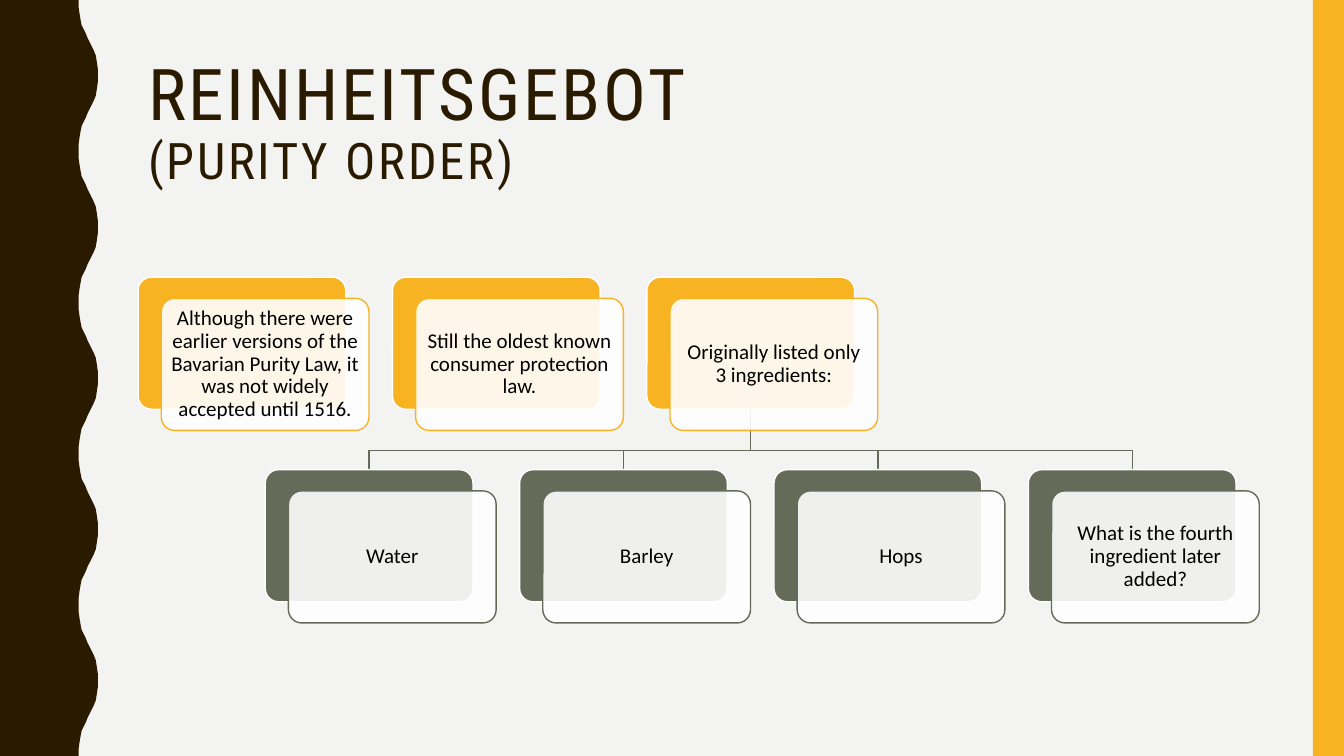
from dataclasses import dataclass

from lxml import etree
from pptx import Presentation
from pptx.dml.color import RGBColor
from pptx.enum.shapes import MSO_SHAPE
from pptx.enum.text import MSO_ANCHOR, PP_ALIGN
from pptx.oxml.ns import qn
from pptx.util import Inches, Pt

RECT, ROUNDED = MSO_SHAPE.RECTANGLE, MSO_SHAPE.ROUNDED_RECTANGLE
MIDDLE, CENTER = MSO_ANCHOR.MIDDLE, PP_ALIGN.CENTER

SLIDE_W, SLIDE_H = 13.33, 7.5

# Card grid: cards are two columns apart, the lower row shifted by one
LEFT, TOP = 1.37, 2.75
COL_W = (10.2 - LEFT) / 7
ROW_H = 1.91
CARD_W, CARD_H = 2.06, 1.31
SHIFT_X, SHIFT_Y = 0.23, 0.21
BRANCH_DROP = 0.41

# Wavy edge: half a wave as (x, y), mirrored for the other half
WAVE_H = 1.5
HALF_WAVE = [(0.78, 0), (0.78, 0.07), (0.79, 0.14), (0.8, 0.2), (0.81, 0.25),
             (0.83, 0.29), (0.85, 0.33), (0.87, 0.38), (0.89, 0.42),
             (0.91, 0.46), (0.93, 0.5), (0.95, 0.55), (0.96, 0.61),
             (0.97, 0.68), (0.97, 0.75)]

FACTS = [
    "Although there were earlier versions of the Bavarian Purity Law, "
    "it was not widely accepted until 1516.",
    "Still the oldest known consumer protection law.",
    "Originally listed only 3 ingredients:",
]
INGREDIENTS = ["Water", "Barley", "Hops",
               "What is the fourth ingredient later added?"]


@dataclass(frozen=True)
class Theme:
    paper: RGBColor = RGBColor(0xF3, 0xF3, 0xF2)
    brown: RGBColor = RGBColor(0x2A, 0x1A, 0x00)
    gold: RGBColor = RGBColor(0xF8, 0xB3, 0x23)
    olive: RGBColor = RGBColor(0x65, 0x6A, 0x59)
    white: RGBColor = RGBColor(0xFF, 0xFF, 0xFF)
    black: RGBColor = RGBColor(0x00, 0x00, 0x00)
    heading_font: str = "Roboto Condensed"
    body_font: str = "Calibri"
    title_size: int = 51
    subtitle_size: int = 36
    body_size: int = 15
    line_width: int = 1


def card_left(col):
    return LEFT + col * COL_W


def card_top(row):
    return TOP + row * ROW_H


class SlideBuilder:
    def __init__(self, slide, theme):
        self.slide = slide
        self.theme = theme
        slide.background.fill.solid()
        slide.background.fill.fore_color.rgb = theme.paper

    def paint(self, shape, fill=None, line=None):
        shape.shadow.inherit = False
        if fill is None:
            shape.fill.background()
        else:
            shape.fill.solid()
            shape.fill.fore_color.rgb = fill
        if line is None:
            shape.line.fill.background()
        else:
            shape.line.color.rgb = line
            shape.line.width = Pt(self.theme.line_width)
        return shape

    def block(self, kind, left, top, width, height, fill, line=None):
        shape = self.slide.shapes.add_shape(
            kind, Inches(left), Inches(top), Inches(width), Inches(height))
        return self.paint(shape, fill, line)

    def outline(self, points, close, fill=None, line=None):
        # Points go in as whole EMU, since the builder rounds to integers
        start, *rest = [(Inches(x), Inches(y)) for x, y in points]
        builder = self.slide.shapes.build_freeform(*start)
        builder.add_line_segments(rest, close=close)
        return self.paint(builder.convert_to_shape(), fill, line)

    def style(self, paragraph, font, size, color):
        paragraph.line_spacing = 0.9
        paragraph.font.name = font
        paragraph.font.size = Pt(size)
        paragraph.font.color.rgb = color

    def wavy_edge(self):
        wave = HALF_WAVE + [(x, WAVE_H - y) for x, y in HALF_WAVE[-2::-1]]
        edge = [(x, y + n * WAVE_H)
                for n in range(round(SLIDE_H / WAVE_H)) for x, y in wave]
        self.outline([(0, 0), *edge, (0, SLIDE_H)], True, self.theme.brown)

    def title(self, heading, subheading):
        theme = self.theme
        box = self.slide.shapes.add_textbox(
            Inches(LEFT), Inches(0.42), Inches(11.13), Inches(1.63))
        frame = box.text_frame
        frame.word_wrap = True
        frame.vertical_anchor = MIDDLE
        paragraph = frame.paragraphs[0]
        self.style(paragraph, theme.heading_font, theme.title_size, theme.brown)
        heading_run = paragraph.add_run()
        heading_run.text = heading
        paragraph.add_line_break()
        subheading_run = paragraph.add_run()
        subheading_run.text = subheading
        subheading_run.font.size = Pt(theme.subtitle_size)
        # Letter spacing of 2 pt
        for run in paragraph.runs:
            run._r.get_or_add_rPr().set("spc", "200")

    def branch(self, parent_col, child_col):
        start_x, end_x = (card_left(c) + CARD_W / 2
                          for c in (parent_col, child_col))
        start_y, end_y = card_top(0) + CARD_H, card_top(1)
        bend_y = start_y + BRANCH_DROP
        self.outline([(start_x, start_y), (start_x, bend_y),
                      (end_x, bend_y), (end_x, end_y)],
                     False, line=self.theme.olive)

    def card(self, col, row, text, accent):
        theme = self.theme
        left, top = card_left(col), card_top(row)
        back = self.block(ROUNDED, left, top, CARD_W, CARD_H,
                          accent, theme.white)
        front = self.block(ROUNDED, left + SHIFT_X, top + SHIFT_Y,
                           CARD_W, CARD_H, theme.white, accent)
        for layer in (back, front):
            layer.adjustments[0] = 0.1
        # Front layer is 90 % opaque
        color = front._element.spPr.find(qn("a:solidFill"))[0]
        etree.SubElement(color, qn("a:alpha")).set("val", "90000")
        frame = front.text_frame
        frame.word_wrap = True
        frame.vertical_anchor = MIDDLE
        frame.margin_left = frame.margin_right = Inches(0.06)
        frame.margin_top = frame.margin_bottom = Inches(0.06)
        paragraph = frame.paragraphs[0]
        paragraph.text = text
        paragraph.alignment = CENTER
        self.style(paragraph, theme.body_font, theme.body_size, theme.black)


def main():
    deck = Presentation()
    deck.slide_width, deck.slide_height = Inches(SLIDE_W), Inches(SLIDE_H)
    theme = Theme()
    page = SlideBuilder(deck.slides.add_slide(deck.slide_layouts[6]), theme)

    # Side decoration
    page.wavy_edge()
    page.block(RECT, 13.02, 0, SLIDE_W - 13.02, SLIDE_H, theme.gold)

    page.title("REINHEITSGEBOT", "(PURITY ORDER)")

    # Branches from the last fact to the ingredients, behind the cards
    fact_cols = [2 * n for n in range(len(FACTS))]
    ingredient_cols = [2 * n + 1 for n in range(len(INGREDIENTS))]
    for col in reversed(ingredient_cols):
        page.branch(fact_cols[-1], col)

    # Cards
    for col, fact in zip(fact_cols, FACTS):
        page.card(col, 0, fact, theme.gold)
    for col, ingredient in zip(ingredient_cols, INGREDIENTS):
        page.card(col, 1, ingredient, theme.olive)

    deck.save("out.pptx")


if __name__ == "__main__":
    main()
